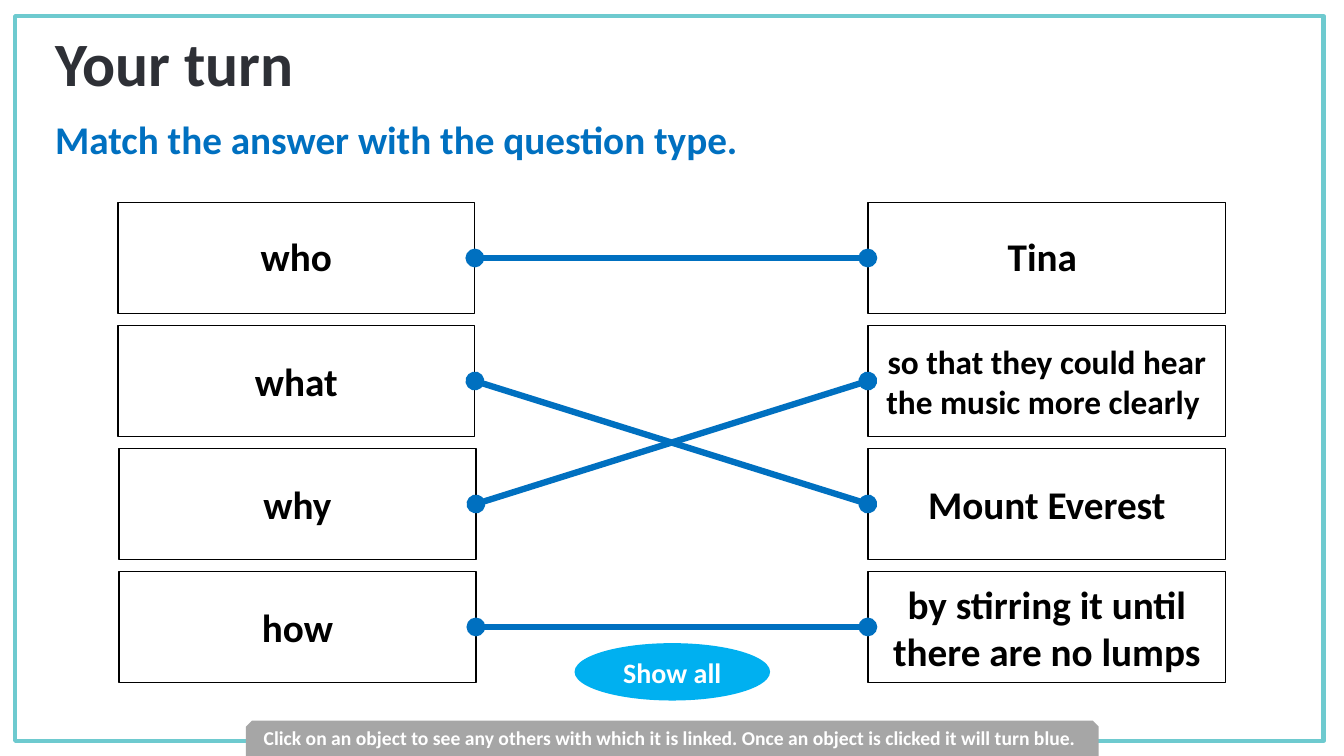
from pptx import Presentation
from pptx.dml.color import RGBColor
from pptx.enum.shapes import MSO_CONNECTOR as Connector, MSO_SHAPE as Shape
from pptx.enum.text import MSO_ANCHOR as Anchor, PP_ALIGN as Align
from pptx.oxml.ns import qn
from pptx.util import Pt
from lxml.etree import SubElement

WHITE = RGBColor(0xFF, 0xFF, 0xFF)
BLACK = RGBColor(0, 0, 0)
DARK = RGBColor(0x2E, 0x30, 0x36)
BLUE = RGBColor(0x00, 0x70, 0xC0)
SKY = RGBColor(0x00, 0xB0, 0xF0)
GREY = RGBColor(0xA6, 0xA6, 0xA6)
TEAL = RGBColor(0x6E, 0xCA, 0xCF)

# Text, size and fixed line spacing of each card, row by row
QUESTIONS = [("who", 28, 30), ("what", 28, None), ("why", 28, None), ("how", 28, None)]
ANSWERS = [
    ("Tina ", 28, 30),
    ("so that they could hear the music more clearly ", 23.8, None),
    ("Mount Everest", 28, None),
    ("by stirring it until there are no lumps", 28, None),
]
MATCHES = [(0, 0), (3, 3), (2, 1), (1, 2)]  # question row, answer row
CARD_HEIGHT, ROW_PITCH = 79.2, 87.84


def place(shape, box):
    shape.left, shape.top, shape.width, shape.height = map(Pt, box)


def add_box(slide, kind, box, fill=None, line=None, line_width=1):
    shape = slide.shapes.add_shape(kind, *map(Pt, box))
    shape.shadow.inherit = False
    if fill is None:
        shape.fill.background()
    else:
        shape.fill.solid()
        shape.fill.fore_color.rgb = fill
    if line is None:
        shape.line.fill.background()
    else:
        shape.line.color.rgb = line
        shape.line.width = Pt(line_width)
    return shape


def write(shape, text, size, color, align=Align.CENTER, anchor=Anchor.MIDDLE,
          insets=(7.2, 3.6, 7.2, 3.6), spacing=None):
    frame = shape.text_frame
    frame.word_wrap = True
    frame.vertical_anchor = anchor
    (frame.margin_left, frame.margin_top,
     frame.margin_right, frame.margin_bottom) = map(Pt, insets)
    para = frame.paragraphs[0]
    para.alignment = align
    if spacing:
        para.line_spacing = Pt(spacing)
    span = para.add_run()
    span.text = text
    font = span.font
    font.name, font.size, font.bold = "Calibri", Pt(size), True
    font.color.rgb = color


def add_heading(slide, box):
    left, top, width, height = box
    title = slide.shapes.title
    place(title, (left, top, 340, height))
    write(title, "Your turn", 44, DARK, Align.LEFT, Anchor.TOP)
    task = slide.shapes.add_textbox(*map(Pt, (left, top + 64.1, width, 41)))
    write(task, "Match the answer with the question type.", 28, BLUE, Align.LEFT)


def add_cards(slide, cards, lefts, top, width):
    shapes = []
    for row, ((text, size, spacing), left) in enumerate(zip(cards, lefts)):
        box = (left, top + row * ROW_PITCH, width, CARD_HEIGHT)
        card = add_box(slide, Shape.RECTANGLE, box, WHITE, BLACK)
        write(card, text, size, BLACK, spacing=spacing)
        shapes.append(card)
    return shapes


def add_match(slide, question, answer):
    link = slide.shapes.add_connector(Connector.STRAIGHT, 0, 0, 0, 0)
    link.begin_connect(question, 3)
    link.end_connect(answer, 1)
    link.line.color.rgb = BLUE
    link.line.width = Pt(4.5)
    outline = link.line._get_or_add_ln()
    for end in ("a:headEnd", "a:tailEnd"):
        SubElement(outline, qn(end), type="oval")
    SubElement(link._element.spPr, qn("a:effectLst"))


def add_matching(slide, box):
    left, top, width = box
    # The two lower questions stand slightly further right
    question_lefts = [left, left, left + 0.75, left + 0.75]
    questions = add_cards(slide, QUESTIONS, question_lefts, top, 255)
    answer_width = 255.6
    answers = add_cards(slide, ANSWERS, [left + width - answer_width] * 4, top, answer_width)
    for question, answer in MATCHES:
        add_match(slide, questions[question], answers[answer])


def add_footer(slide, box):
    left, top, width, height = box
    # Button, centred above the hint
    button_width = 139.7
    button_left = left + (width - button_width) / 2
    button = add_box(slide, Shape.OVAL, (button_left, top - 55.4, button_width, 41), SKY)
    write(button, "Show all", 20, WHITE, insets=(0, 0, 0, 0))
    # Hint along the bottom edge
    hint = add_box(slide, Shape.SNIP_2_SAME_RECTANGLE, box, GREY)
    write(hint, "Click on an object to see any others with which it is linked. "
          "Once an object is clicked it will turn blue. ", 14, WHITE,
          anchor=Anchor.TOP, insets=(7.2, 1.44, 7.2, 3.6))


def main():
    deck = Presentation()
    deck.slide_width, deck.slide_height = Pt(960), Pt(540)
    slide = deck.slides.add_slide(deck.slide_layouts[5])
    # Page frame
    add_box(slide, Shape.RECTANGLE, (10.8, 11.5, 934.6, 517.7), line=TEAL, line_width=3)
    add_heading(slide, (32.4, 14.4, 927.6, 63.4))
    add_matching(slide, (84.2, 144.7, 791.3))
    add_footer(slide, (175.7, 514.8, 609.1, 25.2))
    deck.save("out.pptx")


if __name__ == "__main__":
    main()
